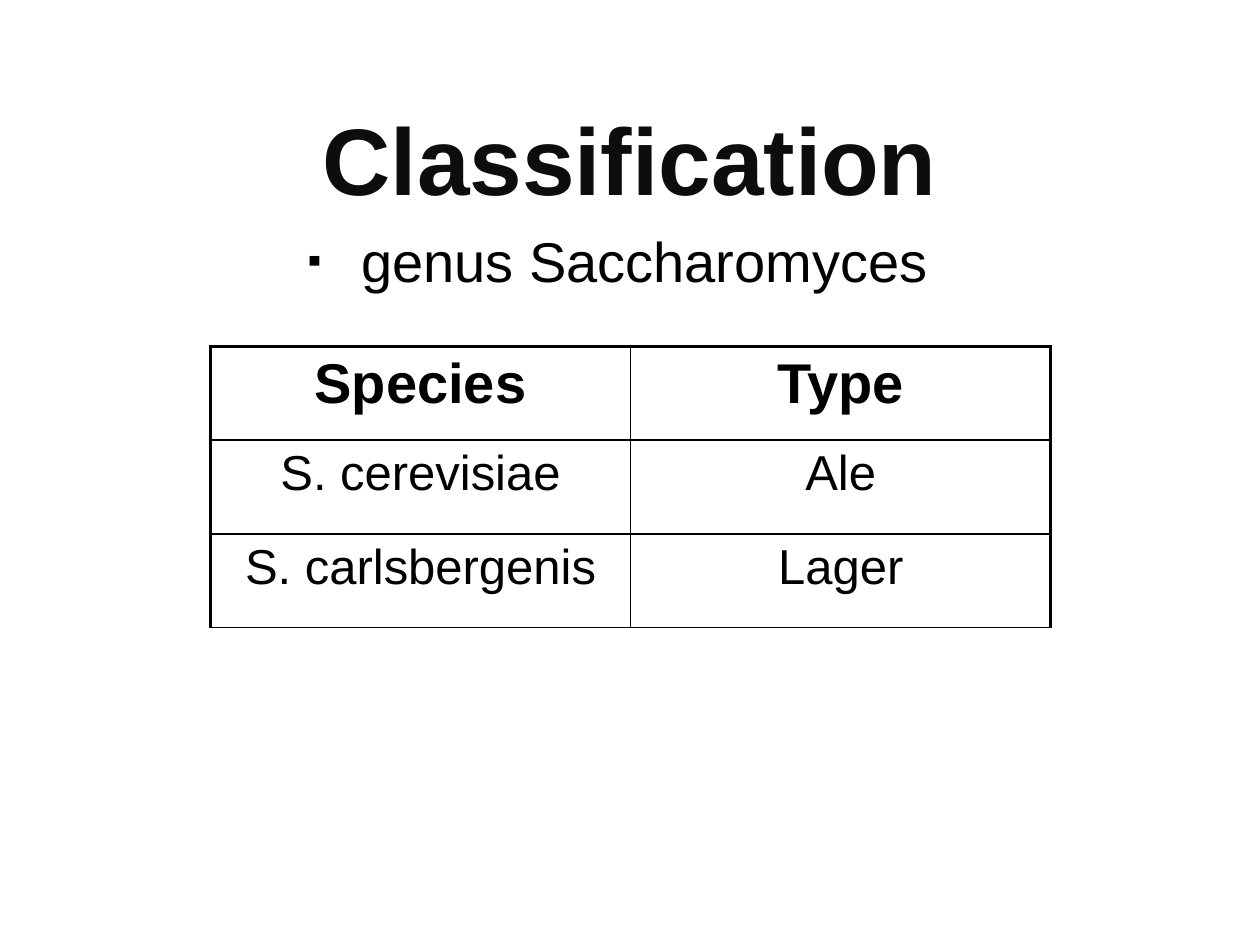
from lxml.etree import SubElement
from pptx import Presentation
from pptx.dml.color import RGBColor
from pptx.enum.text import MSO_ANCHOR as Anchor, PP_ALIGN as Align
from pptx.oxml.ns import qn
from pptx.util import Inches, Pt

BLACK = "000000"
ROWS = [
    ("Species", "Type"),
    ("S. cerevisiae", "Ale"),
    ("S. carlsbergenis", "Lager"),
]


def color(value):
    return RGBColor.from_string(value)


def write(text_frame, text, size, bold=False, ink=BLACK):
    paragraph = text_frame.paragraphs[0]
    paragraph.text = text
    paragraph.alignment = Align.CENTER
    font = paragraph.font
    font.name, font.size, font.bold = "Arial", Pt(size), bold
    font.color.rgb = color(ink)


def add_text_frame(slide, left, top, width, height):
    shape = slide.shapes.add_textbox(left, top, width, height)
    shape.text_frame.word_wrap = True
    return shape.text_frame


def add_title(slide, left, top, width, height):
    text_frame = add_text_frame(slide, left, top, width, height)
    text_frame.vertical_anchor = Anchor.BOTTOM
    write(text_frame, "Classification", 54, True, "0D0D0D")


def add_bullet_line(slide, left, top, width, height):
    text_frame = add_text_frame(slide, left, top, width, height)
    properties = text_frame.paragraphs[0]._p.get_or_add_pPr()
    bullet_color = SubElement(properties, qn("a:buClr"))
    SubElement(bullet_color, qn("a:srgbClr"), val=BLACK)
    SubElement(properties, qn("a:buSzPct"), val="70000")
    SubElement(properties, qn("a:buFont"), typeface="Arial")
    SubElement(properties, qn("a:buChar"), char="▪")
    properties.set("marL", str(Inches(0.1)))
    properties.set("indent", str(-Inches(0.3)))
    write(text_frame, " genus Saccharomyces", 32)


def set_borders(cell, widths):
    properties = cell._tc.get_or_add_tcPr()
    for position, (side, width) in enumerate(widths.items()):
        line = properties.makeelement(qn(f"a:ln{side}"), {"w": str(Pt(width))})
        fill = SubElement(line, qn("a:solidFill"))
        SubElement(fill, qn("a:srgbClr"), val=BLACK)
        properties.insert(position, line)


def add_species_table(slide, left, top, width, height):
    row_count, column_count = len(ROWS), len(ROWS[0])
    table = slide.shapes.add_table(
        row_count, column_count, left, top, width, height
    ).table
    for row_index, row in enumerate(ROWS):
        for column_index, text in enumerate(row):
            cell = table.cell(row_index, column_index)
            cell.fill.background()
            is_header = row_index == 0
            write(cell.text_frame, text, 32 if is_header else 28, is_header)
            set_borders(cell, {
                "L": 2.25 if column_index == 0 else 1,
                "R": 2.25 if column_index == column_count - 1 else 1,
                "T": 2.25 if is_header else 1,
                "B": 1,
            })


def main():
    presentation = Presentation()
    presentation.slide_width = Inches(10)
    presentation.slide_height = Inches(7.5)
    slide = presentation.slides.add_slide(presentation.slide_layouts[6])
    add_title(slide, Inches(1), Inches(0.33), Inches(8), Inches(1.42))
    add_bullet_line(slide, Inches(1), Inches(1.75), Inches(8), Inches(0.75))
    add_species_table(slide, Inches(1.67), Inches(2.75), Inches(6.67), Inches(2.23))
    presentation.save("out.pptx")


if __name__ == "__main__":
    main()
